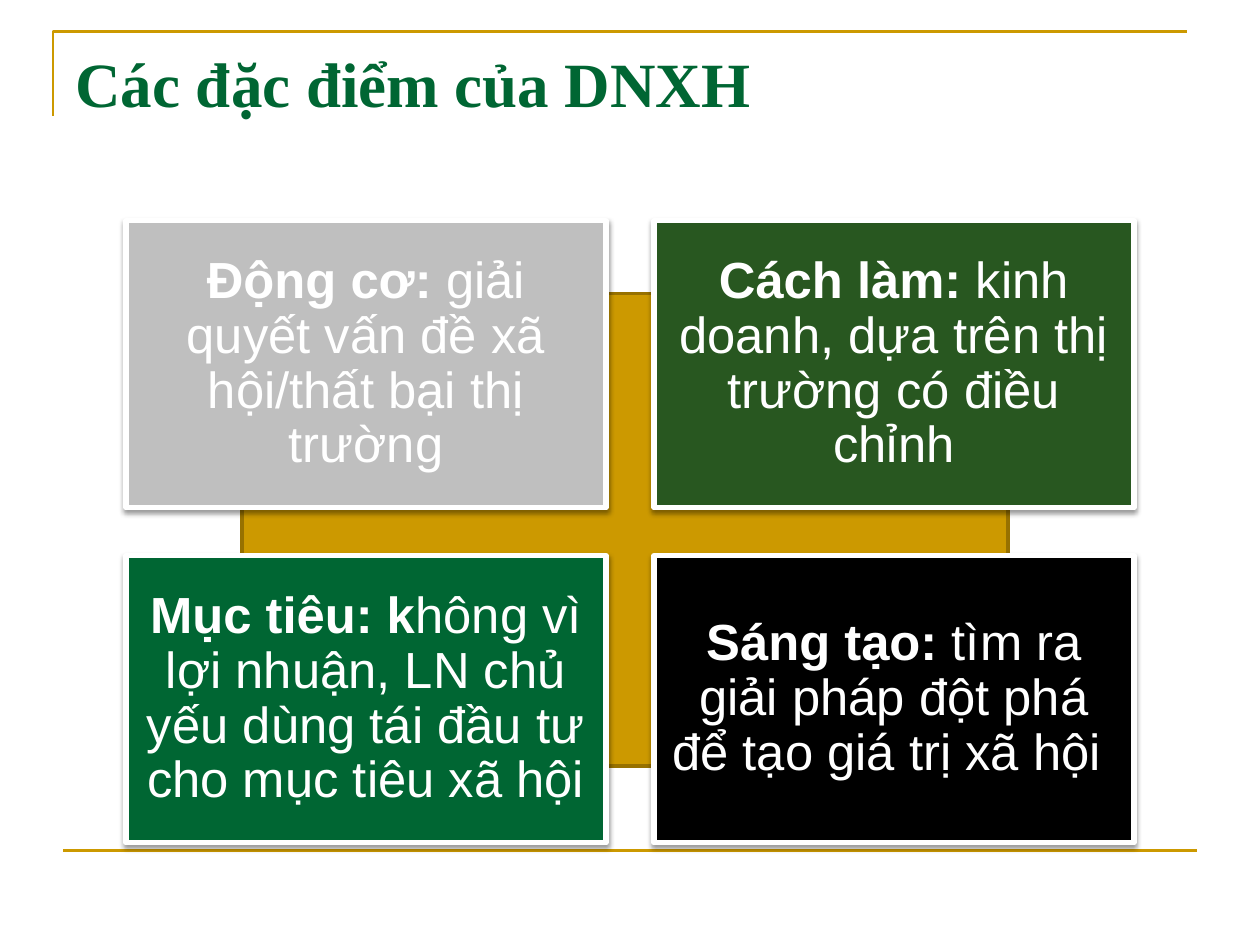
from lxml import etree
from pptx import Presentation
from pptx import util as u
from pptx.dml.color import RGBColor
from pptx.enum import shapes, text
from pptx.oxml.ns import qn

GOLD = RGBColor(0xCC, 0x99, 0x00)
DARK_GOLD = RGBColor(0x97, 0x71, 0x00)
GREEN = RGBColor(0x00, 0x66, 0x33)
FOREST = RGBColor(0x28, 0x57, 0x20)
GREY = RGBColor(0xBF, 0xBF, 0xBF)
BLACK = RGBColor(0x00, 0x00, 0x00)
WHITE = RGBColor(0xFF, 0xFF, 0xFF)

# Card grid, in inches
LEFT, TOP = 1, 1.75
CARD_W, CARD_H = 3.81, 2.28
GAP = 0.38
COLUMNS = 2

TITLE_FONT = {"name": "Times New Roman", "size": u.Pt(36), "bold": True}
CARD_FONT = {"name": "Arial", "size": u.Pt(29)}
CARD_FRAME = {
    "word_wrap": True,
    "vertical_anchor": text.MSO_ANCHOR.MIDDLE,
    **{f"margin_{side}": u.Inches(0.12)
       for side in ("left", "right", "top", "bottom")},
}
CARD_PARAGRAPH = {"alignment": text.PP_ALIGN.CENTER, "line_spacing": 0.9}

CARDS = [
    ("Động cơ: ", "giải quyết vấn đề xã hội/thất bại thị trường", GREY),
    ("Cách làm: ", "kinh doanh, dựa trên thị trường có điều chỉnh", FOREST),
    ("Mục tiêu: k", "hông vì lợi nhuận, LN chủ yếu dùng tái đầu tư "
     "cho mục tiêu xã hội", GREEN),
    ("Sáng tạo: ", "tìm ra giải pháp đột phá để tạo giá trị xã hội ", BLACK),
]


def apply(target, values):
    for name, value in values.items():
        setattr(target, name, value)


def set_line(s, color, width):
    s.line.color.rgb = color
    s.line.width = u.Pt(width)


def add_run(p, words, font, color):
    r = p.add_run()
    r.text = words
    apply(r.font, font)
    r.font.color.rgb = color


def add_rect(slide, x, y, w, h, fill, line, width):
    s = slide.shapes.add_shape(shapes.MSO_SHAPE.RECTANGLE,
                               *map(u.Inches, (x, y, w, h)))
    s.shadow.inherit = False
    s.fill.solid()
    s.fill.fore_color.rgb = fill
    set_line(s, line, width)
    return s


def add_soft_shadow(s):
    effects = s._element.spPr.find(qn("a:effectLst"))
    shadow = etree.SubElement(effects, qn("a:outerShdw"), blurRad=str(u.Pt(3.1)),
                              dist=str(u.Pt(1.6)), dir="5400000", rotWithShape="0")
    color = etree.SubElement(shadow, qn("a:srgbClr"), val=str(BLACK))
    etree.SubElement(color, qn("a:alpha"), val="38000")


def add_card(slide, index, heading, body, fill):
    row, col = divmod(index, COLUMNS)
    s = add_rect(slide, LEFT + col * (CARD_W + GAP), TOP + row * (CARD_H + GAP),
                 CARD_W, CARD_H, fill, WHITE, 3)
    add_soft_shadow(s)
    tf = s.text_frame
    apply(tf, CARD_FRAME)
    p = tf.paragraphs[0]
    apply(p, CARD_PARAGRAPH)
    add_run(p, heading, {**CARD_FONT, "bold": True}, WHITE)
    add_run(p, body, {**CARD_FONT, "bold": False}, WHITE)


def add_frame_lines(slide):
    corner = [(u.Inches(x), u.Inches(y))
              for x, y in ((0.42, 0.92), (0.42, 0.25), (9.42, 0.25))]
    builder = slide.shapes.build_freeform(*corner[0])
    builder.add_line_segments(corner[1:], close=False)
    s = builder.convert_to_shape()
    s.shadow.inherit = False
    s.fill.background()
    set_line(s, GOLD, 1.5)

    rule = slide.shapes.add_connector(shapes.MSO_CONNECTOR.STRAIGHT,
                                      *map(u.Inches, (0.5, 6.75, 9.5, 6.75)))
    etree.SubElement(rule._element.spPr, qn("a:effectLst"))
    set_line(rule, GOLD, 1.5)


def add_title(slide, words):
    s = slide.shapes.add_textbox(*map(u.Inches, (0.5, 0.3, 9, 1.25)))
    tf = s.text_frame
    tf.word_wrap = True
    add_run(tf.paragraphs[0], words, TITLE_FONT, GREEN)


def main():
    prs = Presentation()
    prs.slide_width, prs.slide_height = u.Inches(10), u.Inches(7.5)
    slide = prs.slides.add_slide(prs.slide_layouts[6])

    # Frame and title
    add_frame_lines(slide)
    add_title(slide, "Các đặc điểm của DNXH")

    # Gold panel behind the four cards
    add_rect(slide, 1.92, 2.33, 6.08, 3.75, GOLD, DARK_GOLD, 2)
    for index, card in enumerate(CARDS):
        add_card(slide, index, *card)

    prs.save("out.pptx")


if __name__ == "__main__":
    main()
